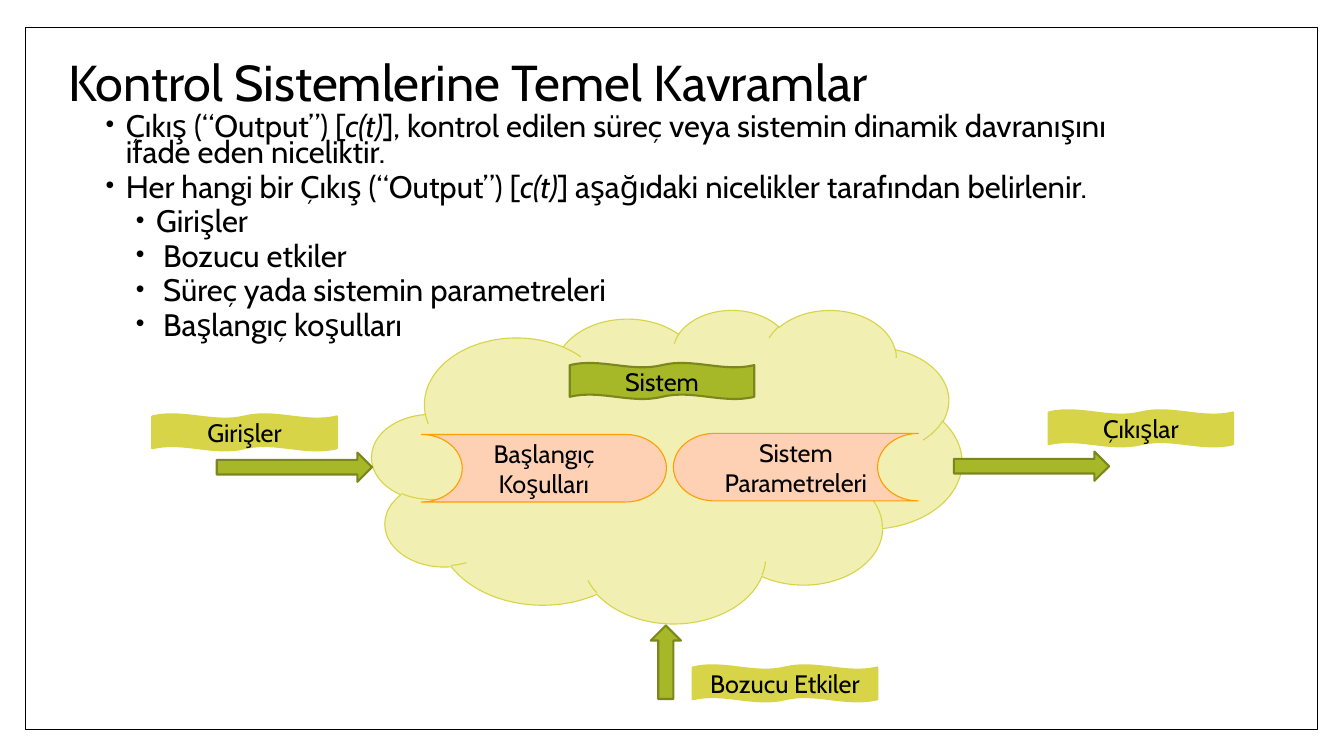
from pptx import Presentation
from pptx.dml.color import RGBColor
from pptx.enum.shapes import MSO_SHAPE
from pptx.enum.text import MSO_ANCHOR, PP_ALIGN
from pptx.oxml.ns import qn
from pptx.oxml.xmlchemy import OxmlElement
from pptx.util import Inches, Pt

FONT = "Cabin"
BLACK = RGBColor(0x00, 0x00, 0x00)
WHITE = RGBColor(0xFF, 0xFF, 0xFF)
GREEN = RGBColor(0xA6, 0xB7, 0x27)
DARK_GREEN = RGBColor(0x7B, 0x87, 0x1D)
LIME = RGBColor(0xD7, 0xD4, 0x47)
PALE_LIME = RGBColor(0xF1, 0xF0, 0xB2)
PEACH = RGBColor(0xFF, 0xD1, 0xB4)
ORANGE = RGBColor(0xFE, 0x9E, 0x00)

# Content; places and sizes are percentages of the slide's width and height
TITLE = "Kontrol Sistemlerine Temel Kavramlar"
SIGNAL = "c(t)"  # set in italics
BULLETS = [  # level, text
    (1, "Çıkış (“Output”) [c(t)], kontrol edilen süreç veya sistemin dinamik "
        "davranışını ifade eden niceliktir."),
    (1, "Her hangi bir Çıkış (“Output”) [c(t)] aşağıdaki nicelikler "
        "tarafından belirlenir."),
    (2, "Girişler"),
    (2, " Bozucu etkiler"),
    (2, " Süreç yada sistemin parametreleri"),
    (2, " Başlangıç koşulları"),
]
LEVEL_INDENT = {1: 0.5, 2: 0.8}  # inches
HANGING = 0.2

FRAME = (1.88, 3.6, 96.17, 92.93)
TITLE_AREA = (4.35, 6.13, 91.67, 10.27)
BULLET_AREA = (4.88, 14.8, 82.52, 34.8)
CLOUD = (27.68, 40.93, 43.89, 41.47)

BANNER_SIZE = (13.73, 4.8)
BANNERS = [  # text, left, top, fill, line
    ("Sistem", 42.39, 48, GREEN, DARK_GREEN),
    ("Bozucu Etkiler", 51.54, 88, LIME, LIME),
    ("Girişler", 11.33, 54.8, LIME, LIME),
    ("Çıkışlar", 78.02, 54.27, LIME, LIME),
]
STORE_SIZE = (18.23, 8.93)
STORES = [  # text, left, top, mirrored
    ("Sistem Parametreleri", 50.11, 57.33, False),
    ("Başlangıç Koşulları", 31.36, 57.47, True),
]
ARROWS = [  # shape, left, top, width, height
    (MSO_SHAPE.UP_ARROW, 48.42, 82.73, 2.25, 9.73),
    (MSO_SHAPE.RIGHT_ARROW, 70.97, 59.73, 11.55, 3.87),
    (MSO_SHAPE.RIGHT_ARROW, 16.13, 59.87, 11.55, 3.87),
]

deck = Presentation()
deck.slide_width, deck.slide_height = Inches(13.33), Inches(7.5)
slide = deck.slides.add_slide(deck.slide_layouts[6])


def place(area):
    left, top, width, height = area
    return (int(deck.slide_width * left / 100), int(deck.slide_height * top / 100),
            int(deck.slide_width * width / 100), int(deck.slide_height * height / 100))


def style(paragraph, size):
    paragraph.font.name = FONT
    paragraph.font.size = Pt(size)
    paragraph.font.color.rgb = BLACK


def add_part(kind, area, fill, line, weight, label=""):
    part = slide.shapes.add_shape(kind, *place(area))
    part.shadow.inherit = False
    part.fill.solid()
    part.fill.fore_color.rgb = fill
    part.line.color.rgb = line
    part.line.width = Pt(weight)
    if label:
        frame = part.text_frame
        frame.word_wrap = True
        frame.vertical_anchor = MSO_ANCHOR.MIDDLE
        frame.margin_left = frame.margin_right = Inches(0.05)
        frame.text = label
        frame.paragraphs[0].alignment = PP_ALIGN.CENTER
        style(frame.paragraphs[0], 18)
    return part


def add_text_area(area):
    frame = slide.shapes.add_textbox(*place(area)).text_frame
    frame.word_wrap = True
    return frame


def set_bullet(paragraph, level):
    properties = paragraph._p.get_or_add_pPr()
    properties.set("marL", str(Inches(LEVEL_INDENT[level])))
    properties.set("indent", str(-Inches(HANGING)))
    for tag, name, value in (("a:buSzPct", "val", "80000"),
                             ("a:buFont", "typeface", "Arial"),
                             ("a:buChar", "char", "•")):
        mark = OxmlElement(tag)
        mark.set(name, value)
        properties.insert_element_before(mark, "a:tabLst", "a:defRPr", "a:extLst")


# Page frame and title
add_part(MSO_SHAPE.RECTANGLE, FRAME, WHITE, BLACK, 1)
heading = add_text_area(TITLE_AREA)
heading.vertical_anchor = MSO_ANCHOR.MIDDLE
heading.text = TITLE
heading.paragraphs[0].line_spacing = 0.9
style(heading.paragraphs[0], 36)

# Bullets
bullet_frame = add_text_area(BULLET_AREA)
for index, (level, text) in enumerate(BULLETS):
    bullet = bullet_frame.add_paragraph() if index else bullet_frame.paragraphs[0]
    bullet.level = level
    bullet.line_spacing = 0.7
    bullet.space_before, bullet.space_after = Pt(2), Pt(4)
    before, signal, after = text.partition(SIGNAL)
    for words in filter(None, (before, signal, after)):
        run = bullet.add_run()
        run.text = words
        if words == SIGNAL:
            run.font.italic = True
    style(bullet, 22.2)
    set_bullet(bullet, level)

# System diagram
add_part(MSO_SHAPE.CLOUD, CLOUD, PALE_LIME, LIME, 0.79)
for text, left, top, mirrored in STORES:
    store = add_part(MSO_SHAPE.FLOWCHART_STORED_DATA, (left, top, *STORE_SIZE),
                     PEACH, ORANGE, 0.79, text)
    if mirrored:
        store._element.spPr.find(qn("a:xfrm")).set("flipH", "1")
for kind, *area in ARROWS:
    add_part(kind, area, GREEN, DARK_GREEN, 1.5)
for text, left, top, fill, line in BANNERS:
    add_part(MSO_SHAPE.DOUBLE_WAVE, (left, top, *BANNER_SIZE), fill, line, 1.5, text)

deck.save("out.pptx")
